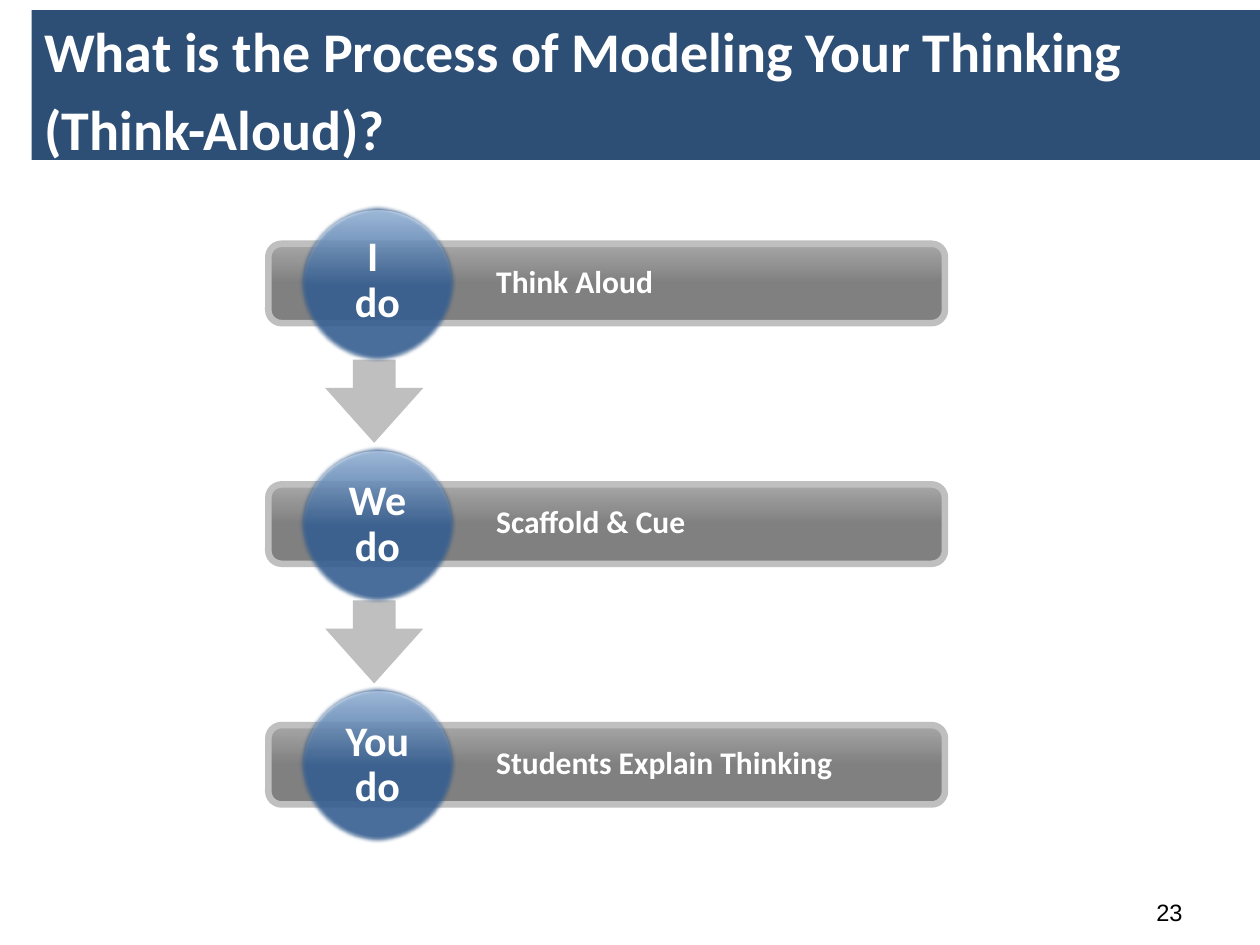
"""Build the think-aloud slide: three teaching steps joined by arrows."""
import pptx
import pptx.util
import pptx.dml.color
import pptx.enum.shapes
import pptx.enum.text
import pptx.oxml
import pptx.oxml.ns

TITLE = ["What is the Process of Modeling Your Thinking", "(Think-Aloud)?"]
STEPS = [  # speaker, activity, bottom inset of the circle
    ("I \vdo", "Think Aloud", 0.1),
    ("We do", "Scaffold & Cue", 0.05),
    ("You do", "Students Explain Thinking", 0.05),
]
PAGE = "23"
BAR_STOPS = [(0, "A6A6A6", 100), (50, "808080", 100), (100, "808080", 100)]
CIRCLE_STOPS = [(0, "95B3D7", 89), (50, "376092", 90), (100, "376092", 90)]
WHITE, GREY, NAVY, RIM = "FFFFFF", "BFBFBF", "2D4E75", "3A5F8C"

FIRST_CENTRE, PITCH = 2.25, 1.91
BAR_LEFT, BAR_WIDTH, BAR_HEIGHT = 2.13, 5.37, 0.63
CIRCLE_LEFT, CIRCLE = 2.39, 1.21
ARROW_LEFT, ARROW_WIDTH, ARROW_HEIGHT = 2.58, 0.78, 0.66
LABEL_LEFT, LABEL_WIDTH, LABEL_HEIGHT = 3.84, 3.57, 0.37

Inches, Pt = pptx.util.Inches, pptx.util.Pt
KINDS = pptx.enum.shapes.MSO_SHAPE
ALIGN = pptx.enum.text.PP_ALIGN
ANCHOR = pptx.enum.text.MSO_ANCHOR
AUTO = pptx.enum.text.MSO_AUTO_SIZE
NS = pptx.oxml.ns.nsdecls("a")


def color(value):
    return pptx.dml.color.RGBColor.from_string(value)


def add_block(slide, kind, left, centre, width, height):
    block = slide.shapes.add_shape(
        kind, *map(Inches, (left, centre - height / 2, width, height)))
    block.shadow.inherit = False
    return block


def paint(block, stops, line, weight):
    block.fill.gradient()
    block.fill.gradient_angle = 270
    stop_list = block._element.spPr.find(".//" + pptx.oxml.ns.qn("a:gsLst"))
    for old in list(stop_list):
        stop_list.remove(old)
    for place, value, opacity in stops:
        stop_list.append(pptx.oxml.parse_xml(
            f'<a:gs {NS} pos="{place * 1000}"><a:srgbClr val="{value}">'
            f'<a:alpha val="{opacity * 1000}"/></a:srgbClr></a:gs>'))
    block.line.color.rgb = color(line)
    block.line.width = Pt(weight)


def style(paragraph, size, value=WHITE, font="Calibri", bold=True, spacing=None):
    for run in paragraph.runs:
        run.font.size, run.font.name, run.font.bold = Pt(size), font, bold
        run.font.color.rgb = color(value)
    if spacing:
        paragraph.line_spacing = Pt(spacing)


def add_label(slide, text, left, top, width, height):
    frame = slide.shapes.add_textbox(
        *map(Inches, (left, top, width, height))).text_frame
    frame.word_wrap = True
    frame.text = text
    return frame


def add_title(slide):
    title = slide.shapes.title
    title.left, title.top, title.width, title.height = map(
        Inches, (0.25, 0.08, 9.75, 1.19))
    title.fill.solid()
    title.fill.fore_color.rgb = color(NAVY)
    frame = title.text_frame
    frame.text = "\n".join(TITLE)
    frame.auto_size, frame.vertical_anchor = AUTO.NONE, ANCHOR.TOP
    for index, paragraph in enumerate(frame.paragraphs):
        properties = paragraph._p.get_or_add_pPr()
        properties.set("marL", str(Inches(0.37)))
        properties.set("indent", str(Inches(-0.37)))
        paragraph.alignment = ALIGN.LEFT
        paragraph.space_before = Pt(6.4 if index else 0)
        style(paragraph, 32)


def add_arrow(slide, centre):
    arrow = add_block(slide, KINDS.DOWN_ARROW, ARROW_LEFT, centre,
                      ARROW_WIDTH, ARROW_HEIGHT)
    arrow.adjustments[0], arrow.adjustments[1] = 0.435, 0.661
    arrow.fill.solid()
    arrow.fill.fore_color.rgb = color(GREY)
    arrow.line.fill.background()


def add_step(slide, centre, speaker, activity, bottom):
    bar = add_block(slide, KINDS.ROUNDED_RECTANGLE, BAR_LEFT, centre,
                    BAR_WIDTH, BAR_HEIGHT)
    paint(bar, BAR_STOPS, GREY, 3.75)

    circle = add_block(slide, KINDS.OVAL, CIRCLE_LEFT, centre, CIRCLE, CIRCLE)
    paint(circle, CIRCLE_STOPS, RIM, 3.25)
    effects = circle._element.spPr.find(pptx.oxml.ns.qn("a:effectLst"))
    effects.append(pptx.oxml.parse_xml(f'<a:softEdge {NS} rad="{Pt(2.5)}"/>'))
    frame = circle.text_frame
    frame.text = speaker
    frame.word_wrap, frame.vertical_anchor = True, ANCHOR.MIDDLE
    frame.margin_left = frame.margin_right = frame.margin_top = Inches(0.05)
    frame.margin_bottom = Inches(bottom)
    frame.paragraphs[0].alignment = ALIGN.CENTER
    style(frame.paragraphs[0], 24, spacing=26)

    label = add_label(slide, activity, LABEL_LEFT, centre - LABEL_HEIGHT / 2,
                      LABEL_WIDTH, LABEL_HEIGHT)
    label.auto_size = AUTO.SHAPE_TO_FIT_TEXT
    style(label.paragraphs[0], 18, spacing=19)


def main():
    deck = pptx.Presentation()
    deck.slide_width, deck.slide_height = Inches(10), Inches(7.5)
    slide = deck.slides.add_slide(deck.slide_layouts[5])
    add_title(slide)
    centres = [FIRST_CENTRE + PITCH * row for row in range(len(STEPS))]
    for centre in centres[:-1]:
        add_arrow(slide, centre + (CIRCLE + ARROW_HEIGHT) / 2)
    for centre, step in zip(centres, STEPS):
        add_step(slide, centre, *step)
    page = add_label(slide, PAGE, 9.08, 7.08, 0.43, 0.33)
    page.word_wrap = False
    style(page.paragraphs[0], 13.5, "000000", "Arial", False)
    deck.save("out.pptx")


if __name__ == "__main__":
    main()
